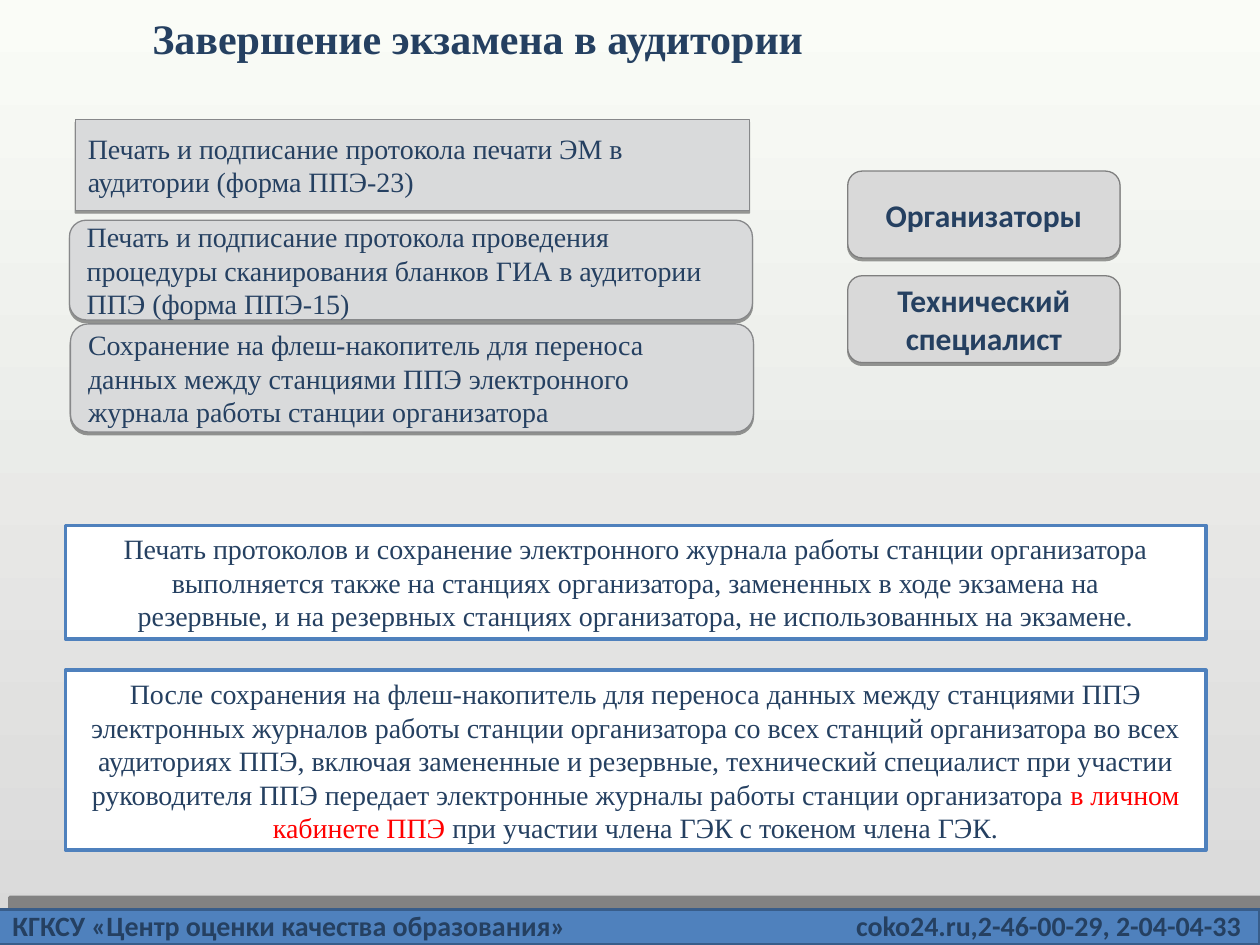
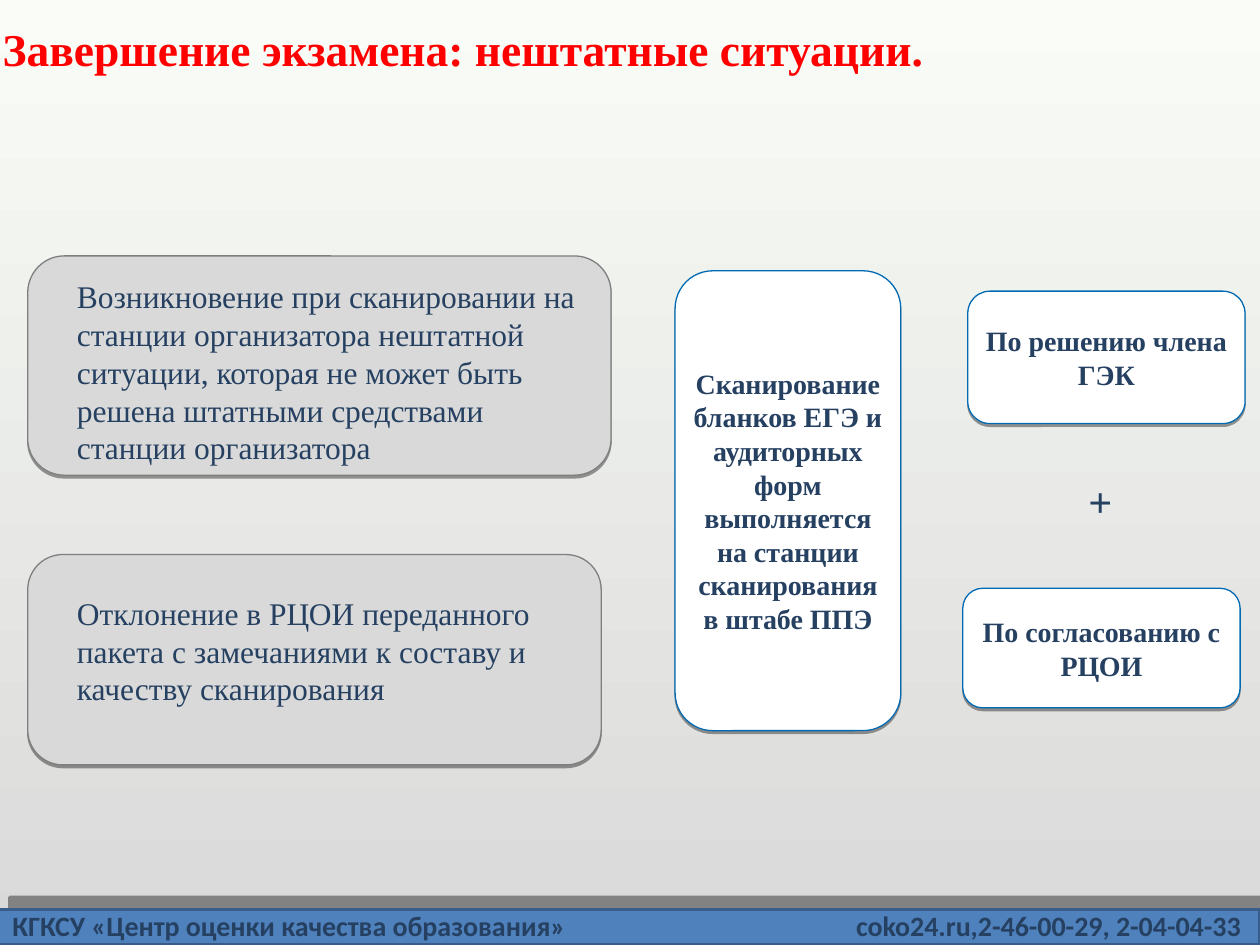
import pptx
import pptx.dml.color
import pptx.enum.shapes
import pptx.enum.text
import pptx.oxml
import pptx.oxml.ns
import pptx.util
from dataclasses import dataclass

Cm, Pt = pptx.util.Cm, pptx.util.Pt
ALIGN = pptx.enum.text.PP_ALIGN
ANCHOR = pptx.enum.text.MSO_ANCHOR
SHAPE = pptx.enum.shapes.MSO_SHAPE


@dataclass(frozen=True)
class Theme:
    serif: str = "Times New Roman"
    sans: str = "Calibri"
    ink: str = "254061"
    alert: str = "FF0000"
    white: str = "FFFFFF"
    bg_top: str = "FAFCF7"
    bg_bottom: str = "D9D9D9"
    step_fill: str = "D9DADB"
    step_line: str = "87888A"
    card_fill: str = "D9D9D9"
    card_line: str = "7F7F7F"
    accent: str = "4F81BD"
    bar_line: str = "385D8A"
    action_line: str = "006AB3"
    body: int = 16
    large: int = 18
    title: int = 24
    alert_title: int = 26
    thin: float = 0.75
    thick: float = 2


T = Theme()


def rgb(color):
    return pptx.dml.color.RGBColor.from_string(color)


# Text: each paragraph is a string or a list of (text, colour) runs
def write_text(sp, paragraphs, size=T.body, font=T.serif, color=T.ink, bold=False,
               align=ALIGN.LEFT, anchor=ANCHOR.TOP, inset=(0.25, 0.13), tab=None):
    tf = sp.text_frame
    tf.word_wrap = True
    tf.vertical_anchor = anchor
    tf.margin_left = tf.margin_right = Cm(inset[0])
    tf.margin_top = tf.margin_bottom = Cm(inset[1])
    for i, runs in enumerate(paragraphs):
        p = tf.paragraphs[0] if i == 0 else tf.add_paragraph()
        p.alignment = align
        if tab:
            p._p.get_or_add_pPr().append(pptx.oxml.parse_xml(
                f'<a:tabLst {pptx.oxml.ns.nsdecls("a")}>'
                f'<a:tab pos="{Cm(tab)}" algn="r"/></a:tabLst>'))
        for text, run_color in [(runs, color)] if isinstance(runs, str) else runs:
            r = p.add_run()
            r.text = text
            r.font.size, r.font.name, r.font.bold = Pt(size), font, bold
            r.font.color.rgb = rgb(run_color)


def add_label(s, at, text, **fmt):
    write_text(s.shapes.add_textbox(*map(Cm, at)), [text], **fmt)


# Shapes
def add_shadow(sp, alpha, distance, angle):
    effects = sp._element.spPr.find(pptx.oxml.ns.qn("a:effectLst"))
    effects.append(pptx.oxml.parse_xml(
        f'<a:outerShdw {pptx.oxml.ns.nsdecls("a")} blurRad="0" dist="{Pt(distance)}" '
        f'dir="{angle * 60000}" algn="ctr" rotWithShape="0"><a:srgbClr val="000000">'
        f'<a:alpha val="{alpha * 1000}"/></a:srgbClr></a:outerShdw>'))


def add_box(s, at, fill, line, width=T.thin, kind=SHAPE.ROUNDED_RECTANGLE,
            shadow=(38, 1.6, 90)):
    sp = s.shapes.add_shape(kind, *map(Cm, at))
    sp.shadow.inherit = False
    sp.fill.solid()
    sp.fill.fore_color.rgb = rgb(fill)
    sp.line.color.rgb = rgb(line)
    sp.line.width = Pt(width)
    if shadow:
        add_shadow(sp, *shadow)
    return sp


def add_step(s, at, text, kind=SHAPE.ROUNDED_RECTANGLE):
    sp = add_box(s, at, T.step_fill, T.step_line, kind=kind)
    write_text(sp, [text], anchor=ANCHOR.MIDDLE)


def add_role(s, at, text):
    sp = add_box(s, at, T.card_fill, T.card_line)
    write_text(sp, [text], size=T.large, font=T.sans, bold=True,
               align=ALIGN.CENTER, anchor=ANCHOR.MIDDLE)


def add_note(s, top, height, paragraphs):
    sp = add_box(s, (1.32, top, 22.99, height), T.white, T.accent, T.thick,
                 SHAPE.RECTANGLE, shadow=None)
    write_text(sp, paragraphs, align=ALIGN.CENTER)


def add_action(s, at, text):
    sp = add_box(s, at, T.white, T.action_line)
    write_text(sp, [text], bold=True, align=ALIGN.CENTER, anchor=ANCHOR.MIDDLE,
               inset=(0.15, 0.08))


def add_case(s, card_at, text_at, text):
    add_box(s, card_at, T.card_fill, T.card_line)
    add_label(s, text_at, text, size=T.large)


# Shared background, footer and title
def set_background(prs):
    fill = prs.slide_master.background.fill
    fill.gradient()
    fill.gradient_angle = 270
    for stop, color in zip(fill.gradient_stops, (T.bg_top, T.bg_bottom)):
        stop.color.rgb = rgb(color)


def add_slide(prs, title, title_at, **title_fmt):
    s = prs.slides.add_slide(prs.slide_layouts[6])
    add_box(s, (-0.05, 18.34, 25.45, 0.71), T.accent, T.bar_line, T.thick,
            SHAPE.RECTANGLE, shadow=(40, 10, 315))
    add_label(s, (0, 18.19, 25.4, 0.94),
              "КГКСУ «Центр оценки качества образования»\tcoko24.ru,2-46-00-29, 2-04-04-33",
              font=T.sans, bold=True, tab=24.77)
    add_label(s, title_at, title, bold=True, align=ALIGN.CENTER, **title_fmt)
    return s


def build_completion(prs):
    s = add_slide(prs, "Завершение экзамена в аудитории", (1.45, 0.13, 16.36, 1.27),
                  size=T.title)
    # Steps in the room
    add_step(s, (1.4, 4.44, 13.77, 2.01),
             "Печать и подписание протокола проведения процедуры сканирования "
             "бланков ГИА в аудитории ППЭ (форма ППЭ-15)")
    add_step(s, (1.42, 6.53, 13.77, 2.18),
             "Сохранение на флеш-накопитель для переноса данных между станциями ППЭ "
             "электронного журнала работы станции организатора")
    add_step(s, (1.52, 2.41, 13.59, 1.83),
             "Печать и подписание протокола печати ЭМ в аудитории (форма ППЭ-23)",
             SHAPE.RECTANGLE)
    # Notes
    add_note(s, 13.51, 3.63, [
        "После сохранения на флеш-накопитель для переноса данных между станциями ППЭ",
        [("электронных журналов работы станции организатора со всех станций организатора "
          "во всех аудиториях ППЭ, включая замененные и резервные, технический специалист "
          "при участии руководителя ППЭ передает электронные журналы работы станции "
          "организатора ", T.ink),
         ("в личном кабинете ППЭ ", T.alert),
         ("при участии члена ГЭК с токеном члена ГЭК.", T.ink)]])
    add_note(s, 10.59, 2.29, [
        "Печать протоколов и сохранение электронного журнала работы станции организатора "
        "выполняется также на станциях организатора, замененных в ходе экзамена на",
        "резервные, и на резервных станциях организатора, не использованных на экзамене."])
    # People in charge
    for i, role in enumerate(("Организаторы", "Технический специалист")):
        add_role(s, (17.09, 3.45 + 2.11 * i, 5.49, 1.75), role)


def build_emergencies(prs):
    s = add_slide(prs, "Завершение экзамена: нештатные ситуации.",
                  (-0.36, -0.25, 19.41, 2.46), size=T.alert_title, color=T.alert,
                  anchor=ANCHOR.MIDDLE)
    # Cases
    add_case(s, (0.56, 5.16, 11.76, 4.42), (1.3, 5.46, 10.8, 4.06),
             "Возникновение при сканировании на станции организатора нештатной ситуации, "
             "которая не может быть решена штатными средствами станции организатора")
    add_case(s, (0.56, 11.18, 11.56, 4.24), (1.3, 11.84, 10.39, 2.54),
             "Отклонение в РЦОИ переданного пакета с замечаниями к составу и качеству "
             "сканирования")
    # Response and its two conditions
    add_action(s, (13.61, 5.46, 4.55, 9.27),
               "Сканирование бланков ЕГЭ и аудиторных форм выполняется на станции "
               "сканирования в штабе ППЭ")
    add_action(s, (19.51, 5.87, 5.59, 2.67), "По решению члена ГЭК")
    add_label(s, (21.69, 9.45, 1.19, 1.27), "+", size=T.title, bold=True)
    add_action(s, (19.41, 11.86, 5.59, 2.41), "По согласованию с РЦОИ")


def main():
    prs = pptx.Presentation()
    prs.slide_width, prs.slide_height = Cm(25.4), Cm(19.05)
    set_background(prs)
    build_completion(prs)
    build_emergencies(prs)
    prs.save("out.pptx")


if __name__ == "__main__":
    main()
